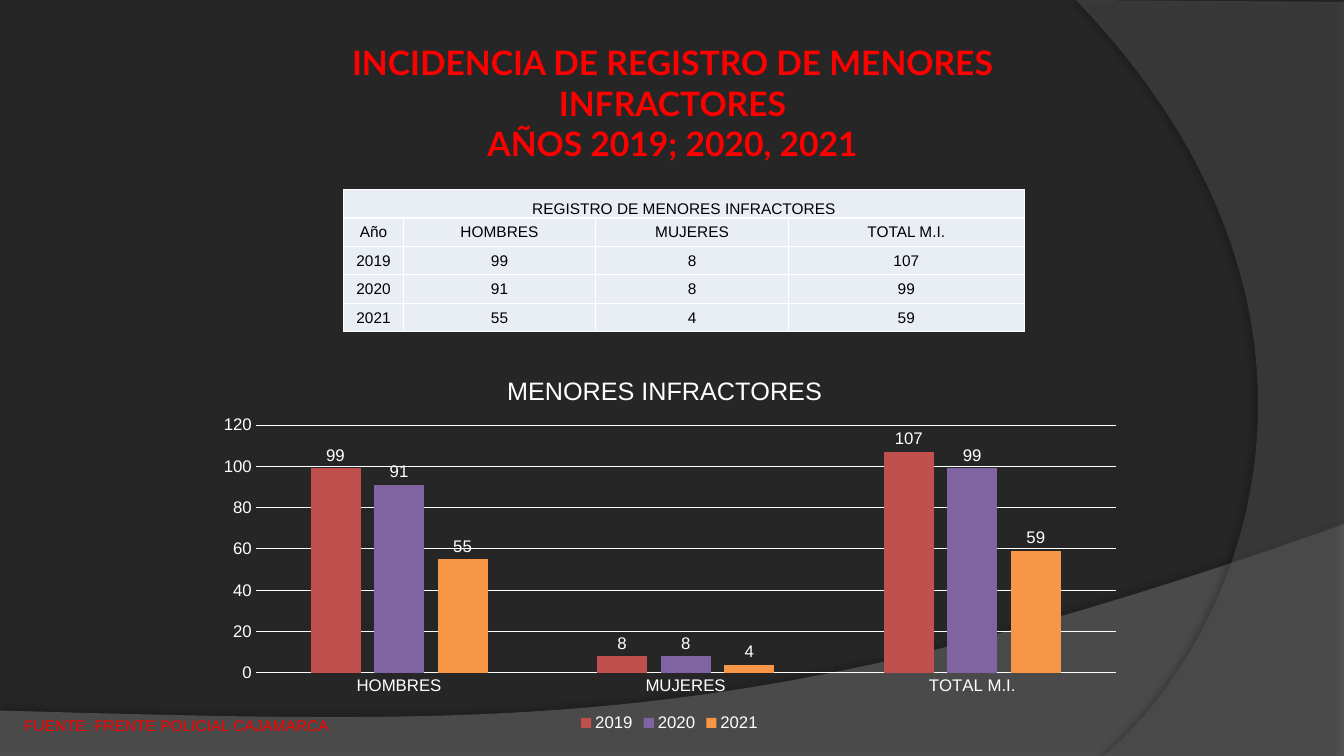
from lxml import etree
from pptx import Presentation
from pptx.chart.data import CategoryChartData
from pptx.dml.color import RGBColor
from pptx.enum.chart import XL_CHART_TYPE, XL_LABEL_POSITION, XL_LEGEND_POSITION, XL_TICK_MARK
from pptx.enum.text import MSO_ANCHOR, MSO_AUTO_SIZE, PP_ALIGN
from pptx.oxml import parse_xml
from pptx.oxml.ns import nsdecls, qn
from pptx.util import Inches, Pt

COLUMNS = XL_CHART_TYPE.COLUMN_CLUSTERED
OUTSIDE = XL_LABEL_POSITION.OUTSIDE_END
LEGEND_BOTTOM = XL_LEGEND_POSITION.BOTTOM
NO_TICK = XL_TICK_MARK.NONE
CENTER, LEFT = PP_ALIGN.CENTER, PP_ALIGN.LEFT
TOP, MIDDLE, BOTTOM = MSO_ANCHOR.TOP, MSO_ANCHOR.MIDDLE, MSO_ANCHOR.BOTTOM
NO_FIT = MSO_AUTO_SIZE.NONE

COLORS = {
    "background": "262626", "low_wave": "7F7F7F", "side_wave": "5E5E5E",
    "shadow": "000000", "heading": "FF0000", "cell": "E9EDF4",
    "cell_text": "000000", "white": "FFFFFF",
    "2019": "C0504D", "2020": "8064A2", "2021": "F79646",
}
GROUPS = ["HOMBRES", "MUJERES", "TOTAL M.I."]
RECORDS = {"2019": (99, 8, 107), "2020": (91, 8, 99), "2021": (55, 4, 59)}


def rgb(name):
    """Return the named colour."""
    return RGBColor.from_string(COLORS[name])


def style_font(font, size, color, family="Arial", bold=False):
    """Set size, colour, family and weight of a font."""
    font.size, font.name, font.bold = Pt(size), family, bold
    font.color.rgb = rgb(color)


def write_lines(frame, lines, align, size, color, family="Arial", bold=False):
    """Write one paragraph for each line."""
    for index, line in enumerate(lines):
        paragraph = frame.add_paragraph() if index else frame.paragraphs[0]
        paragraph.alignment = align
        run = paragraph.add_run()
        run.text = line
        style_font(run.font, size, color, family, bold)


def curve(start, first, second, end, steps=60):
    """Return points along a cubic curve, after its start."""
    points = []
    for step in range(1, steps + 1):
        t = step / steps
        weights = ((1 - t) ** 3, 3 * t * (1 - t) ** 2, 3 * t ** 2 * (1 - t), t ** 3)
        points.append(tuple(
            sum(w * p[axis] for w, p in zip(weights, (start, first, second, end)))
            for axis in (0, 1)))
    return points


def add_wave(slide, points, color, opacity, shadow_opacity, distance, direction):
    """Draw a translucent background wave with a soft shadow."""
    corners = [(Inches(x), Inches(y)) for x, y in points]
    builder = slide.shapes.build_freeform(*corners[0], scale=1.0)
    builder.add_line_segments(corners[1:], close=True)
    wave = builder.convert_to_shape()
    wave.fill.solid()
    wave.fill.fore_color.rgb = rgb(color)
    wave.line.fill.background()
    wave.shadow.inherit = False
    properties = wave.element.spPr
    fill_color = properties.find(qn("a:solidFill")).find(qn("a:srgbClr"))
    etree.SubElement(fill_color, qn("a:alpha"), val=str(opacity * 1000))
    properties.find(qn("a:effectLst")).append(parse_xml(
        f'<a:outerShdw {nsdecls("a")} blurRad="{Pt(4)}" dist="{Pt(distance)}" '
        f'dir="{direction * 60000}" algn="ctr" rotWithShape="0">'
        f'<a:srgbClr val="{COLORS["shadow"]}"><a:alpha val="{shadow_opacity * 1000}"/>'
        '</a:srgbClr></a:outerShdw>'))


def add_title(slide, lines):
    """Place and format the slide title."""
    title = slide.shapes.title
    title.left, title.top = Inches(3.17), Inches(0.37)
    title.width, title.height = Inches(7), Inches(1.31)
    frame = title.text_frame
    frame.word_wrap, frame.auto_size = True, NO_FIT
    frame.vertical_anchor = TOP
    write_lines(frame, lines, CENTER, 24, "heading", "Lato", True)


def add_source_note(slide, text):
    """Add the source note at the lower left."""
    note = slide.shapes.add_textbox(Inches(0.14), Inches(7.06), Inches(3.26), Inches(0.29))
    note.text_frame.word_wrap = True
    write_lines(note.text_frame, [text], LEFT, 11, "heading")


def format_cell(cell, anchor):
    """Set fill, margins, anchor and white borders of a cell."""
    cell.fill.solid()
    cell.fill.fore_color.rgb = rgb("cell")
    cell.margin_left = cell.margin_right = cell.margin_top = Inches(0.01)
    cell.margin_bottom = 0
    cell.vertical_anchor = anchor
    properties = cell._tc.get_or_add_tcPr()
    for index, side in enumerate(("lnL", "lnR", "lnT", "lnB")):
        properties.insert(index, parse_xml(
            f'<a:{side} {nsdecls("a")} w="{Pt(1)}"><a:solidFill>'
            f'<a:srgbClr val="{COLORS["white"]}"/></a:solidFill></a:{side}>'))


def add_records_table(slide):
    """Add the table of records by year."""
    rows = [["REGISTRO DE MENORES INFRACTORES", "", "", ""], ["Año", *GROUPS]]
    rows += [[year, *map(str, values)] for year, values in RECORDS.items()]
    table = slide.shapes.add_table(
        len(rows), 4, Inches(3.41), Inches(1.88), Inches(6.75), Inches(1.41)).table
    table.first_row = table.horz_banding = False
    for column, width in zip(table.columns, (0.59, 1.91, 1.91, 2.34)):
        column.width = Inches(width)
    for row_index, row in enumerate(rows):
        for column_index, text in enumerate(row):
            cell = table.cell(row_index, column_index)
            format_cell(cell, MIDDLE if row_index else BOTTOM)
            if text:
                write_lines(cell.text_frame, [text], CENTER, 11, "cell_text")
    table.cell(0, 0).merge(table.cell(0, 3))


def manual_layout(**settings):
    """Return a manual chart layout element."""
    parts = "".join(f'<c:{key} val="{value}"/>' for key, value in settings.items())
    return parse_xml(f'<c:layout {nsdecls("c")}><c:manualLayout>{parts}'
                     '</c:manualLayout></c:layout>')


def place_chart_part(part, layout):
    """Give a chart part its layout in place of any earlier one."""
    earlier = part.find(qn("c:layout"))
    if earlier is not None:
        part.remove(earlier)
    text = part.find(qn("c:tx"))
    part.insert(0 if text is None else 1, layout)


def add_records_chart(slide):
    """Add the column chart of records by group."""
    data = CategoryChartData()
    data.categories = GROUPS
    for year, values in RECORDS.items():
        data.add_series(year, values)
    chart = slide.shapes.add_chart(
        COLUMNS, Inches(2.04), Inches(3.48), Inches(9.2), Inches(3.82), data).chart
    style_font(chart.font, 12, "white")
    write_lines(chart.chart_title.text_frame, ["MENORES INFRACTORES"], CENTER, 18, "white")
    chart.chart_title.include_in_layout = False
    chart.has_legend = True
    chart.legend.position = LEGEND_BOTTOM
    chart.legend.include_in_layout = False
    style_font(chart.legend.font, 12, "white")

    for axis in (chart.category_axis, chart.value_axis):
        axis.major_tick_mark = axis.minor_tick_mark = NO_TICK
        style_font(axis.tick_labels.font, 12, "white")
    values_axis = chart.value_axis
    values_axis.minimum_scale, values_axis.maximum_scale = 0, 120
    values_axis.major_unit = 20
    values_axis.format.line.fill.background()
    for line in (chart.category_axis.format.line, values_axis.major_gridlines.format.line):
        line.color.rgb = rgb("white")
        line.width = Pt(0.75)

    plot = chart.plots[0]
    plot.gap_width, plot.overlap, plot.vary_by_categories = 219, -27, False
    for series in plot.series:
        series.format.fill.solid()
        series.format.fill.fore_color.rgb = rgb(series.name)
        labels = series.data_labels
        labels.show_value, labels.position = True, OUTSIDE
        style_font(labels.font, 12, "white")

    place_chart_part(chart.chart_title._element, manual_layout(
        xMode="edge", yMode="edge", x=0.32, y=0.05))
    place_chart_part(chart._chartSpace.chart.plotArea, manual_layout(
        layoutTarget="inner", xMode="edge", yMode="edge", x=0.054, y=0.193, w=0.927, h=0.644))


def main():
    """Build and save the slide."""
    deck = Presentation()
    deck.slide_width, deck.slide_height = Inches(13.33), Inches(7.5)
    slide = deck.slides.add_slide(deck.slide_layouts[5])
    slide.background.fill.solid()
    slide.background.fill.fore_color.rgb = rgb("background")
    low_edge = curve((13.33, 5.2), (7.45, 7.29), (5.21, 7.19), (0, 7.05))
    add_wave(slide, [(0, 7.5), (13.33, 7.5), (13.33, 5.2), *low_edge],
             "low_wave", 45, 35, 3.5, 270)
    side_edge = curve((10.95, 7.5), (12.46, 6.19), (13.57, 3), (10.67, 0))
    add_wave(slide, [(13.33, 0.02), (13.33, 7.5), (10.95, 7.5), *side_edge],
             "side_wave", 40, 45, 4, 180)
    add_records_chart(slide)
    add_records_table(slide)
    add_title(slide, ["INCIDENCIA DE REGISTRO DE MENORES INFRACTORES",
                      "AÑOS 2019; 2020, 2021"])
    add_source_note(slide, "FUENTE: FRENTE POLICIAL CAJAMARCA")
    deck.save("out.pptx")


if __name__ == "__main__":
    main()
